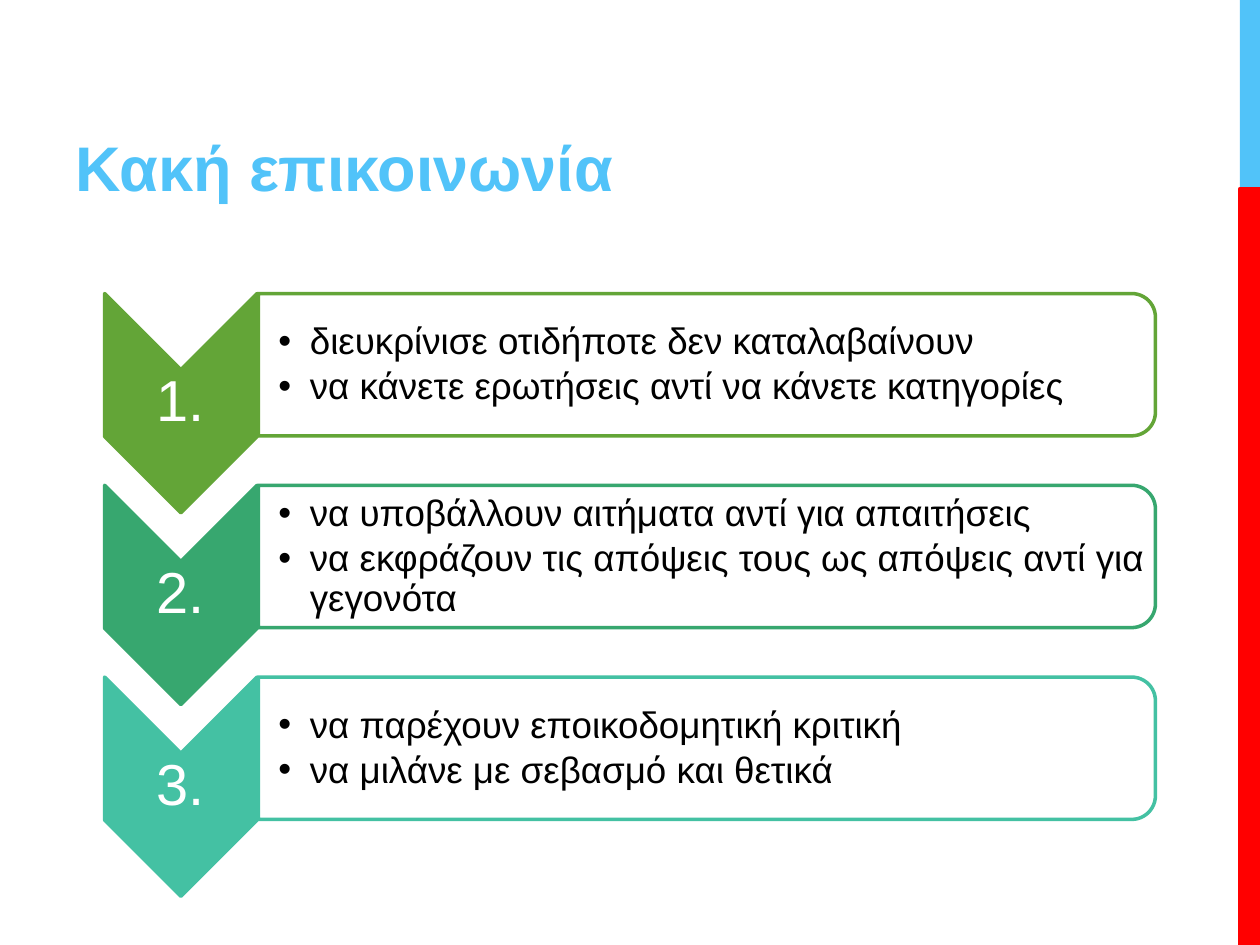
"""Build a slide of three numbered chevrons with boxed advice on communication."""
from dataclasses import dataclass

from lxml import etree
from pptx import Presentation
from pptx import util as u
from pptx.dml.color import RGBColor
from pptx.enum import shapes, text
from pptx.oxml.ns import qn

CELL = u.Inches(0.1)
COLS, ROWS = 100, 75
FIRST_ROW, ROW_STEP = 23.9, 15.22


@dataclass(frozen=True)
class Theme:
    font: str = "Arial"
    sky: str = "51C3F9"
    red: str = "FF0000"
    white: str = "FFFFFF"
    black: str = "000000"
    title: float = 36
    number: float = 33
    body: float = 21
    outline: float = 2
    bar_outline: float = 2.25


@dataclass(frozen=True)
class Box:
    col: float
    row: float
    cols: float
    rows: float

    def emu(self) -> tuple[int, ...]:
        return tuple(round(n * CELL) for n in (self.col, self.row, self.cols, self.rows))

    def turned(self) -> "Box":
        """Return the box that covers this one after a quarter turn."""
        shift = (self.cols - self.rows) / 2
        return Box(self.col + shift, self.row - shift, self.rows, self.cols)


@dataclass(frozen=True)
class Step:
    number: str
    color: str
    points: tuple[str, ...]


THEME = Theme()
STEPS = (
    Step("1.", "63A537", ("διευκρίνισε οτιδήποτε δεν καταλαβαίνουν",
                          "να κάνετε ερωτήσεις αντί να κάνετε κατηγορίες")),
    Step("2.", "37A76F", ("να υποβάλλουν αιτήματα αντί για απαιτήσεις",
                          "να εκφράζουν τις απόψεις τους ως απόψεις αντί για γεγονότα")),
    Step("3.", "44C1A3", ("να παρέχουν εποικοδομητική κριτική",
                          "να μιλάνε με σεβασμό και θετικά")),
)


def add_block(slide, kind, box: Box, fill: str, line: str | None = None,
              width: float = THEME.outline, rotation: float = 0):
    """Add a filled preset shape, outlined when a line colour is given."""
    sp = slide.shapes.add_shape(kind, *box.emu())
    sp.shadow.inherit = False
    sp.rotation = rotation
    sp.fill.solid()
    sp.fill.fore_color.rgb = RGBColor.from_string(fill)
    if line:
        sp.line.color.rgb = RGBColor.from_string(line)
        sp.line.width = u.Pt(width)
    else:
        sp.line.fill.background()
    return sp


def add_text(slide, box: Box, lines: tuple[str, ...], size: float, color: str,
             anchor, insets: tuple[float, ...], bold: bool = False):
    """Add a wrapped text box with one paragraph for each line."""
    tf = slide.shapes.add_textbox(*box.emu()).text_frame
    tf.word_wrap = True
    tf.vertical_anchor = anchor
    tf.margin_left, tf.margin_top, tf.margin_right, tf.margin_bottom = map(u.Inches, insets)
    tf.text = "\n".join(lines)
    for p in tf.paragraphs:
        for r in p.runs:
            r.font.name = THEME.font
            r.font.size = u.Pt(size)
            r.font.bold = bold
            r.font.color.rgb = RGBColor.from_string(color)
    return tf


def add_bullet(p) -> None:
    """Give a paragraph a hanging round bullet."""
    pPr = p._p.get_or_add_pPr()
    pPr.set("marL", str(u.Inches(0.25)))
    pPr.set("indent", str(-u.Inches(0.25)))
    clr = etree.SubElement(pPr, qn("a:buClr"))
    etree.SubElement(clr, qn("a:srgbClr"), val=THEME.black)
    etree.SubElement(pPr, qn("a:buFont"), typeface=THEME.font)
    etree.SubElement(pPr, qn("a:buChar"), char="•")


def add_step(slide, step: Step, row: float) -> None:
    """Draw one numbered chevron with its panel of points."""
    middle = text.MSO_ANCHOR.MIDDLE
    kinds = shapes.MSO_SHAPE
    add_block(slide, kinds.CHEVRON, Box(8.3, row - 0.6, 12.1, 17.4).turned(),
              step.color, step.color, rotation=90)
    tf = add_text(slide, Box(8.3, row + 5.5, 12.1, 5.2), (step.number,),
                  THEME.number, THEME.white, middle, (0.02,) * 4)
    tf.paragraphs[0].alignment = text.PP_ALIGN.CENTER
    tf.paragraphs[0].line_spacing = 0.9

    panel = add_block(slide, kinds.ROUND_2_SAME_RECTANGLE,
                      Box(20.5, row - 0.6, 71.2, 11.3).turned(),
                      THEME.white, step.color, rotation=90)
    white = panel._element.spPr.find(qn("a:solidFill"))[0]
    etree.SubElement(white, qn("a:alpha"), val="90000")
    tf = add_text(slide, Box(20.5, row, 70.6, 10.2), step.points,
                  THEME.body, THEME.black, middle, (0.16, 0.01, 0.01, 0.01))
    for p in tf.paragraphs:
        add_bullet(p)
        p.line_spacing = 0.9
        p.space_after = u.Pt(0.15 * THEME.body)


def main() -> None:
    """Build and save the slide."""
    prs = Presentation()
    prs.slide_width, prs.slide_height = COLS * CELL, ROWS * CELL
    slide = prs.slides.add_slide(prs.slide_layouts[6])
    rect = shapes.MSO_SHAPE.RECTANGLE
    add_block(slide, rect, Box(98.4, 0, 1.6, 15), THEME.sky)
    add_block(slide, rect, Box(98.4, 15, 1.6, 60), THEME.red, THEME.red, THEME.bar_outline)
    add_text(slide, Box(5, 1.7, 70.2, 15), ("Κακή επικοινωνία",), THEME.title, THEME.sky,
             text.MSO_ANCHOR.BOTTOM, (0.1, 0.05, 0.1, 0.05), bold=True)
    for i, step in enumerate(STEPS):
        add_step(slide, step, FIRST_ROW + i * ROW_STEP)
    prs.save("out.pptx")


if __name__ == "__main__":
    main()
